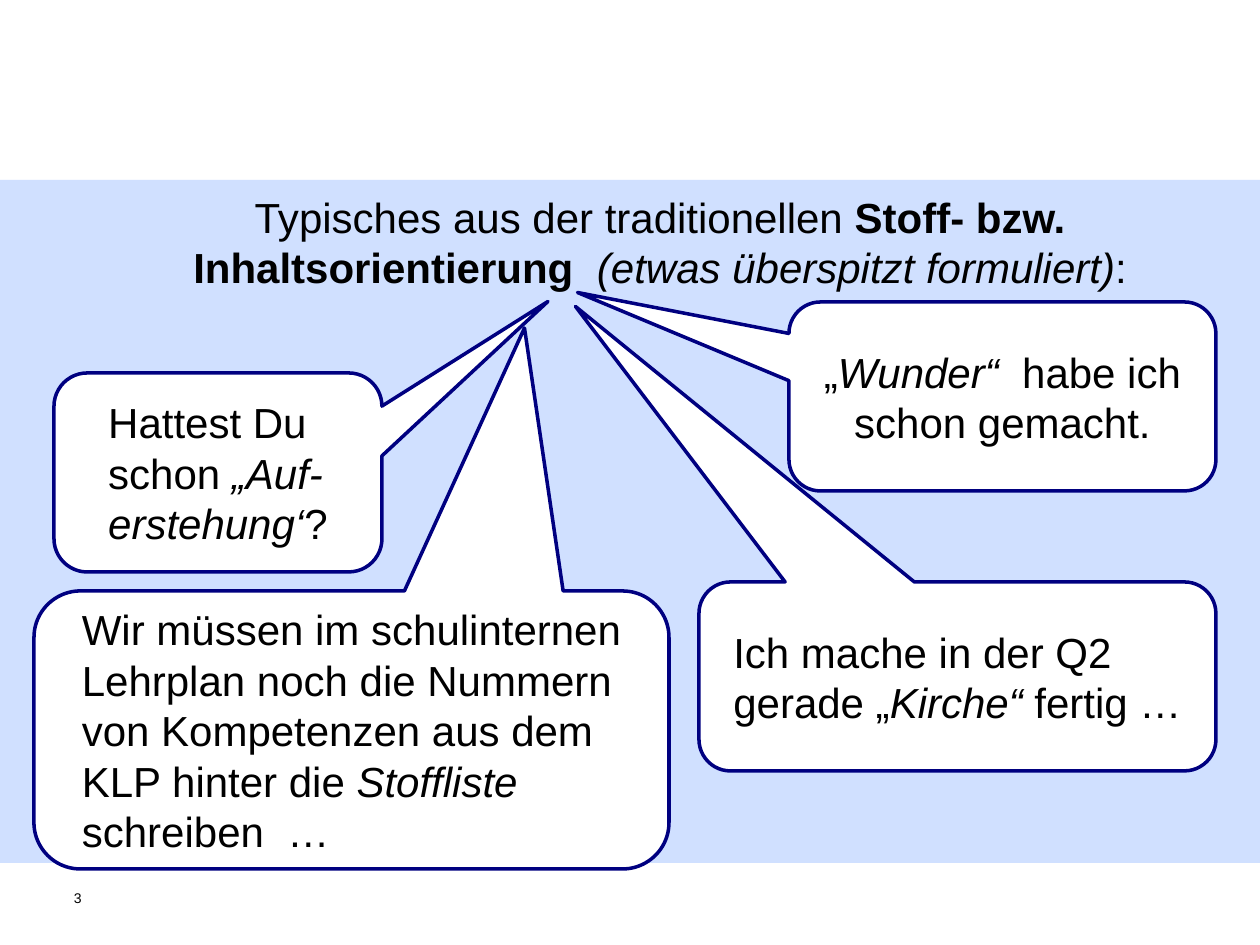
import pptx
import pptx.util
from lxml import etree
from pptx.dml.color import RGBColor
from pptx.enum.shapes import MSO_SHAPE
from pptx.enum.text import MSO_ANCHOR, PP_ALIGN
from pptx.oxml.ns import qn

EMU_PER_PX = 914400 / 126
BLACK = RGBColor(0x00, 0x00, 0x00)
WHITE = RGBColor(0xFF, 0xFF, 0xFF)
NAVY = RGBColor(0x00, 0x00, 0x80)
BAND_BLUE = RGBColor(0x66, 0x99, 0xFF)


def px(*lengths):
    return [pptx.util.Emu(round(length * EMU_PER_PX)) for length in lengths]


def write_paragraph(paragraph, runs, alignment, size=24):
    """Fill a paragraph from (text, style) pairs; style is "", "bold" or "italic"."""
    paragraph.alignment = alignment
    for text, style in runs:
        run = paragraph.add_run()
        run.text = text
        run.font.name = "Arial"
        run.font.size = pptx.util.Pt(size)
        run.font.color.rgb = BLACK
        run.font.bold = style == "bold"
        run.font.italic = style == "italic"


presentation = pptx.Presentation()
presentation.slide_width, presentation.slide_height = px(1260, 945)
slide = presentation.slides.add_slide(presentation.slide_layouts[6])

# Pale blue band
band = slide.shapes.add_shape(MSO_SHAPE.RECTANGLE, *px(0, 180, 1260, 683))
band.shadow.inherit = False
band.fill.solid()
band.fill.fore_color.rgb = BAND_BLUE
band.line.fill.background()
band_color = band.fill._xPr.find(qn("a:solidFill"))[0]
etree.SubElement(band_color, qn("a:alpha")).set("val", "30000")

# Heading
heading = slide.shapes.add_textbox(*px(154, 185, 1012, 115))
heading.text_frame.word_wrap = True
write_paragraph(heading.text_frame.paragraphs[0], [
    ("Typisches aus der traditionellen ", ""),
    ("Stoff- bzw. Inhaltsorientierung  ", "bold"),
    ("(etwas überspitzt formuliert)", "italic"),
    (":", ""),
], PP_ALIGN.CENTER)

# Speech bubbles: box, pointer tip relative to the centre, alignment, paragraphs
bubbles = [
    ((789, 302, 427, 189), (-425, -104), PP_ALIGN.CENTER, [
        [("„", ""), ("Wunder“ ", "italic"), (" habe ich", "")],
        [("schon gemacht.", "")],
    ]),
    ((54, 373, 328, 199), (330, -171), PP_ALIGN.LEFT, [
        [("Hattest Du schon ", ""), ("„Auf-erstehung‘", "italic"), ("?", "")],
    ]),
    ((699, 582, 517, 189), (-382, -370), PP_ALIGN.LEFT, [
        [("Ich mache in der Q2 gerade „", ""), ("Kirche“", "italic"), (" fertig …", "")],
    ]),
    ((34, 591, 635, 278), (173, -402), PP_ALIGN.LEFT, [
        [("Wir müssen im schulinternen Lehrplan noch die Nummern von Kompetenzen "
          "aus dem KLP hinter die ", ""),
         ("Stoffliste", "italic"), (" schreiben  …", "")],
    ]),
]
for box, tip, alignment, paragraphs in bubbles:
    bubble = slide.shapes.add_shape(MSO_SHAPE.ROUNDED_RECTANGULAR_CALLOUT, *px(*box))
    bubble.adjustments[0] = tip[0] / box[2]
    bubble.adjustments[1] = tip[1] / box[3]
    bubble.adjustments[2] = 0.167
    bubble.shadow.inherit = False
    bubble.fill.solid()
    bubble.fill.fore_color.rgb = WHITE
    bubble.line.color.rgb = NAVY
    bubble.line.width = pptx.util.Pt(2)
    text_frame = bubble.text_frame
    text_frame.word_wrap = True
    text_frame.vertical_anchor = MSO_ANCHOR.MIDDLE
    # Centre the text block as a whole, whatever its paragraph alignment
    text_frame._txBody.bodyPr.set("anchorCtr", "1")
    for index, runs in enumerate(paragraphs):
        paragraph = text_frame.add_paragraph() if index else text_frame.paragraphs[0]
        write_paragraph(paragraph, runs, alignment)

# Slide number
number = slide.shapes.add_textbox(*px(74, 890, 40, 47))
number.text_frame.word_wrap = True
number.text_frame.margin_left = number.text_frame.margin_right = 0
number.text_frame.margin_top = number.text_frame.margin_bottom = 0
write_paragraph(number.text_frame.paragraphs[0], [("3", "")], PP_ALIGN.LEFT, size=8)

presentation.save("out.pptx")
